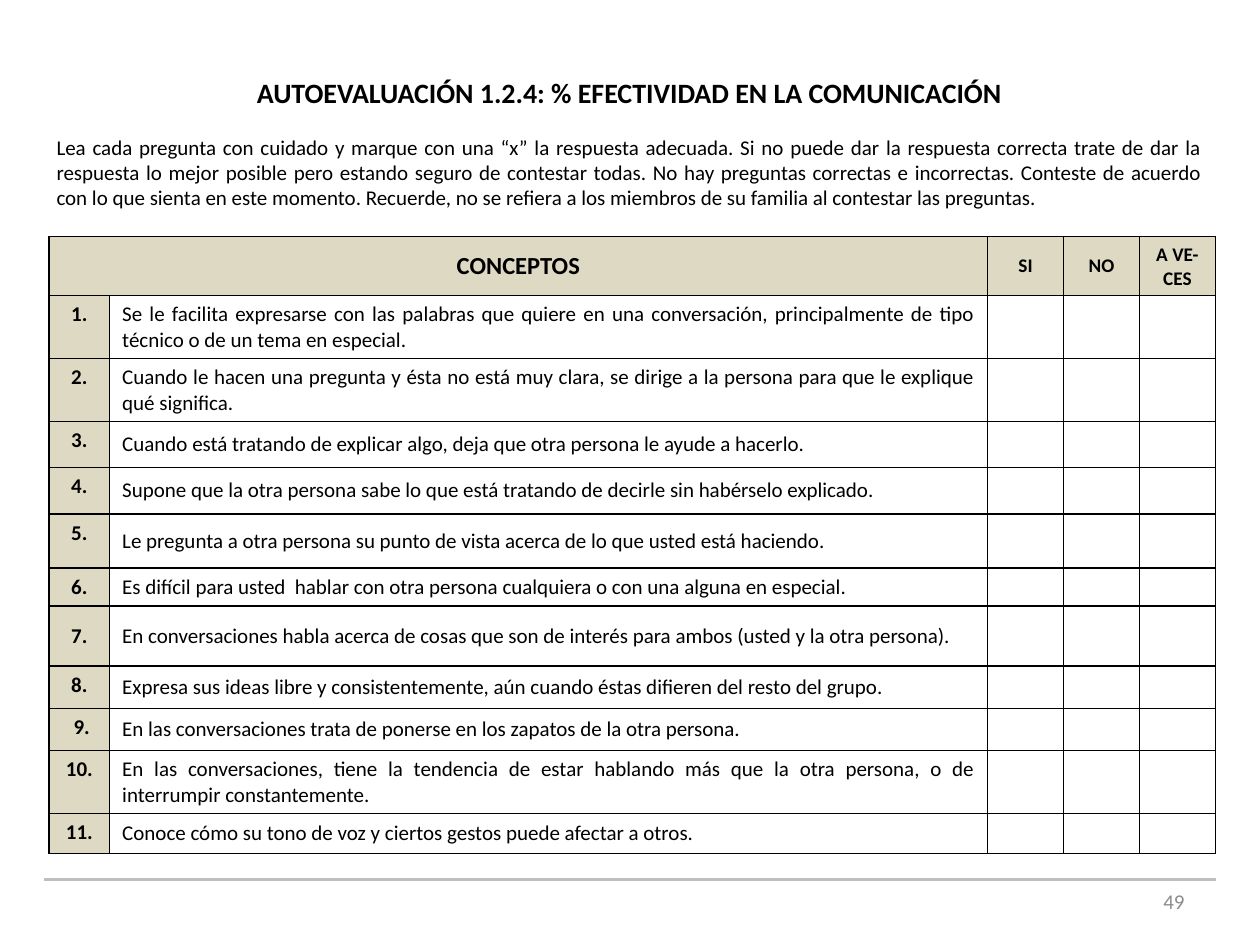
from dataclasses import dataclass

from lxml.etree import SubElement
from pptx import Presentation
from pptx.dml.color import RGBColor
from pptx.enum.shapes import MSO_CONNECTOR as Connector
from pptx.enum.text import MSO_ANCHOR as Anchor, PP_ALIGN as Align
from pptx.oxml.ns import qn
from pptx.util import Cm, Pt


@dataclass(frozen=True)
class Theme:
    font: str = "Calibri"
    ink: str = "000000"
    muted: str = "8C8C8C"
    rule: str = "BFBFBF"
    heading_fill: str = "DDD9C3"
    answer_fill: str = "FFFFFF"
    title_size: int = 16
    concept_size: int = 14
    body_size: int = 12
    answer_size: int = 11


THEME = Theme()

TITLE = "AUTOEVALUACIÓN 1.2.4: % EFECTIVIDAD EN LA COMUNICACIÓN"
INSTRUCTIONS = (
    "Lea cada pregunta con cuidado y marque con una “x” la respuesta adecuada. "
    "Si no puede dar la respuesta correcta trate de dar la respuesta lo mejor posible "
    "pero estando seguro de contestar todas. No hay preguntas correctas e incorrectas. "
    "Conteste de acuerdo con lo que sienta en este momento. Recuerde, no se refiera a "
    "los miembros de su familia al contestar las preguntas."
)
ANSWERS = ["SI", "NO", "A VE-CES"]
COLUMN_WIDTHS = [1.22, 17.7] + [1.53] * len(ANSWERS)
HEADER_HEIGHT = 1.17
QUESTIONS = [
    ("1.", 1.27, "Se le facilita expresarse con las palabras que quiere en una "
     "conversación, principalmente de tipo técnico o de un tema en especial."),
    ("2.", 1.27, "Cuando le hacen una pregunta y ésta no está muy clara, se dirige a la "
     "persona para que le explique qué significa."),
    ("3.", 0.93, "Cuando está tratando de explicar algo, deja que otra persona le ayude a hacerlo."),
    ("4.", 0.93, "Supone que la otra persona sabe lo que está tratando de decirle sin habérselo explicado."),
    ("5.", 1.09, "Le pregunta a otra persona su punto de vista acerca de lo que usted está haciendo."),
    ("6.", 0.77, "Es difícil para usted  hablar con otra persona cualquiera o con una alguna en especial."),
    ("7.", 1.21, "En conversaciones habla acerca de cosas que son de interés para ambos "
     "(usted y la otra persona)."),
    ("8.", 0.85, "Expresa sus ideas libre y consistentemente, aún cuando éstas difieren del resto del grupo."),
    (" 9.", 0.85, "En las conversaciones trata de ponerse en los zapatos de la otra persona."),
    ("10.", 1.27, "En las conversaciones, tiene la tendencia de estar hablando más que la otra "
     "persona, o de interrumpir constantemente."),
    ("11.", 0.81, "Conoce cómo su tono de voz y ciertos gestos puede afectar a otros."),
]
CENTERED_NUMBERS = {"7."}


def write(paragraph, text, size, align, bold=False, color=THEME.ink):
    paragraph.text = text
    paragraph.alignment = align
    font = paragraph.font
    font.name = THEME.font
    font.size = Pt(size)
    font.bold = bold
    font.color.rgb = RGBColor.from_string(color)


def add_text_frame(slide, left, top, width, height):
    shape = slide.shapes.add_textbox(Cm(left), Cm(top), Cm(width), Cm(height))
    frame = shape.text_frame
    frame.word_wrap = True
    frame.vertical_anchor = Anchor.MIDDLE
    return frame


def add_introduction(slide):
    frame = add_text_frame(slide, 0.89, 1.37, 23.6, 3)
    write(frame.paragraphs[0], TITLE, THEME.title_size, Align.CENTER, bold=True)
    instructions = frame.add_paragraph()
    write(instructions, INSTRUCTIONS, THEME.body_size, Align.JUSTIFY)
    instructions.space_before = Pt(14.5)


def add_footer(slide):
    line = slide.shapes.add_connector(Connector.STRAIGHT, Cm(0.89), Cm(17.73), Cm(24.51), Cm(17.73))
    line.line.color.rgb = RGBColor.from_string(THEME.rule)
    line.line.width = Pt(2)
    SubElement(line._element.spPr, qn("a:effectLst"))
    frame = add_text_frame(slide, 18.21, 17.65, 5.92, 1.02)
    write(frame.paragraphs[0], "49", THEME.body_size, Align.RIGHT, color=THEME.muted)


def add_borders(cell):
    properties = cell._tc.get_or_add_tcPr()
    for position, side in enumerate(("a:lnL", "a:lnR", "a:lnT", "a:lnB")):
        border = SubElement(properties, qn(side), w=str(Pt(1)))
        fill = SubElement(border, qn("a:solidFill"))
        SubElement(fill, qn("a:srgbClr"), val=THEME.ink)
        properties.insert(position, border)


def style_cell(cell, fill, anchor=Anchor.MIDDLE):
    cell.fill.solid()
    cell.fill.fore_color.rgb = RGBColor.from_string(fill)
    cell.vertical_anchor = anchor
    add_borders(cell)


def fill_cell(cell, text, size, align, fill, bold=False, anchor=Anchor.MIDDLE):
    style_cell(cell, fill, anchor)
    write(cell.text_frame.paragraphs[0], text, size, align, bold)


def fill_empty_cell(cell):
    style_cell(cell, THEME.answer_fill)
    paragraph = cell.text_frame.paragraphs[0]
    SubElement(paragraph._p, qn("a:endParaRPr"), sz=str(THEME.body_size * 100))


def fill_header(table):
    table.cell(0, 0).merge(table.cell(0, 1))
    style_cell(table.cell(0, 1), THEME.heading_fill)
    fill_cell(table.cell(0, 0), "CONCEPTOS", THEME.concept_size, Align.CENTER,
              THEME.heading_fill, bold=True)
    for column, answer in enumerate(ANSWERS, start=2):
        fill_cell(table.cell(0, column), answer, THEME.answer_size, Align.CENTER,
                  THEME.heading_fill, bold=True)


def fill_question(table, row, number, question):
    anchor = Anchor.MIDDLE if number in CENTERED_NUMBERS else Anchor.TOP
    fill_cell(table.cell(row, 0), number, THEME.body_size, Align.CENTER,
              THEME.heading_fill, bold=True, anchor=anchor)
    fill_cell(table.cell(row, 1), question, THEME.body_size, Align.JUSTIFY, THEME.answer_fill)
    for column in range(2, len(COLUMN_WIDTHS)):
        fill_empty_cell(table.cell(row, column))


def add_questionnaire(slide):
    heights = [HEADER_HEIGHT] + [height for _, height, _ in QUESTIONS]
    table = slide.shapes.add_table(
        len(heights), len(COLUMN_WIDTHS), Cm(0.99), Cm(4.77),
        Cm(sum(COLUMN_WIDTHS)), Cm(sum(heights)),
    ).table
    for column, width in zip(table.columns, COLUMN_WIDTHS):
        column.width = Cm(width)
    for row, height in zip(table.rows, heights):
        row.height = Cm(height)
    fill_header(table)
    for row, (number, _, question) in enumerate(QUESTIONS, start=1):
        fill_question(table, row, number, question)


def main():
    presentation = Presentation()
    presentation.slide_width = Cm(25.4)
    presentation.slide_height = Cm(19.05)
    slide = presentation.slides.add_slide(presentation.slide_layouts[6])
    add_footer(slide)
    add_introduction(slide)
    add_questionnaire(slide)
    presentation.save("out.pptx")


if __name__ == "__main__":
    main()
